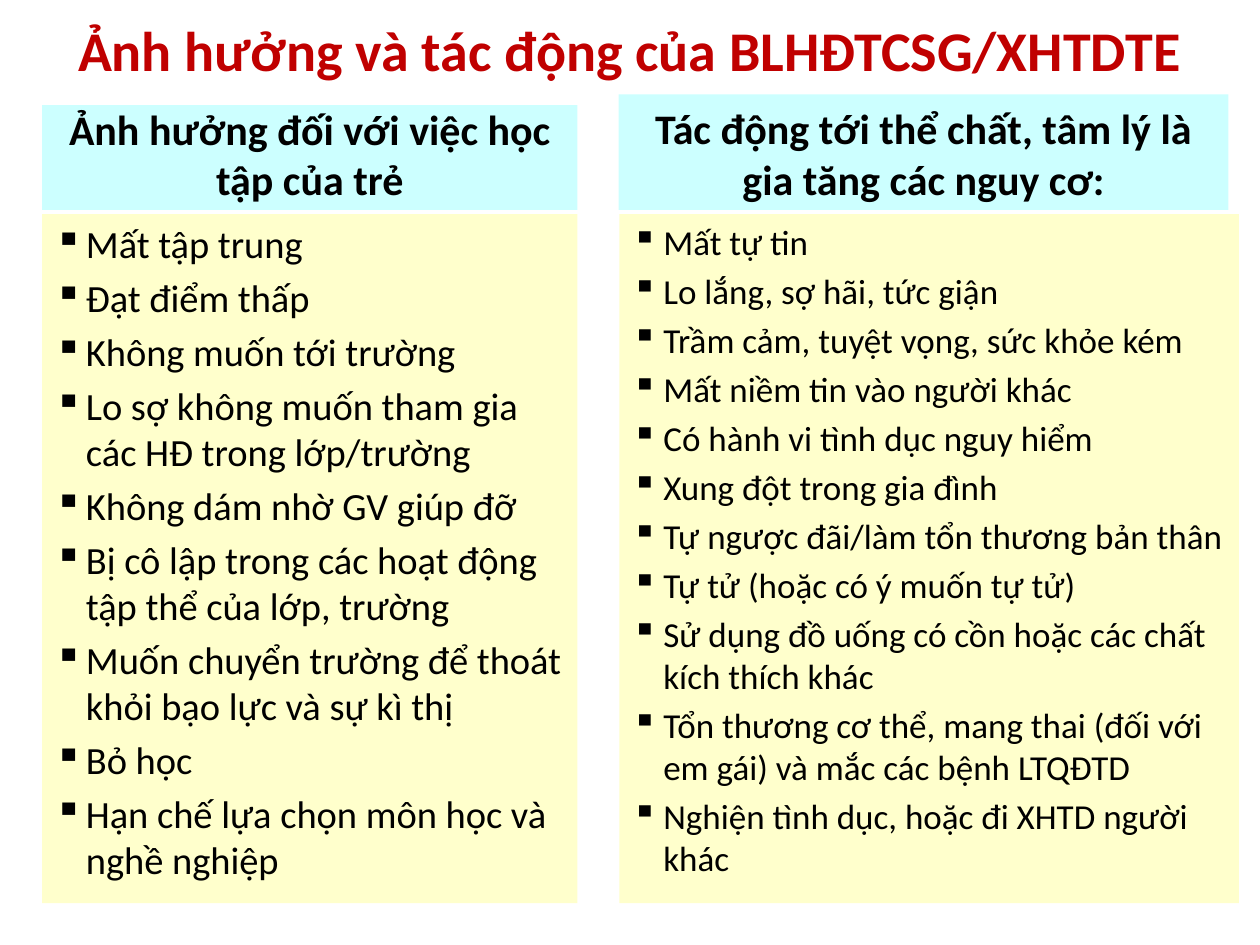
from pptx import Presentation
from pptx.dml.color import RGBColor
from pptx.enum.shapes import MSO_SHAPE
from pptx.enum.text import MSO_ANCHOR, PP_ALIGN
from pptx.oxml.ns import qn
from pptx.util import Pt
from lxml import etree

RECT = MSO_SHAPE.RECTANGLE
TOP, MID, LOW = MSO_ANCHOR.TOP, MSO_ANCHOR.MIDDLE, MSO_ANCHOR.BOTTOM
LEFT, MIDDLE = PP_ALIGN.LEFT, PP_ALIGN.CENTER

FONT = "Calibri"
RED, BLACK, CYAN, CREAM = "C00000", "000000", "CCFFFF", "FFFFCC"
INDENT = 18
LIST_TOP, LIST_HIGH = 122.4, 393.8
HEAD_END = 120

TITLE = "Ảnh hưởng và tác động của BLHĐTCSG/XHTDTE"
STUDY = [
    "Mất tập trung",
    "Đạt điểm thấp",
    "Không muốn tới trường",
    "Lo sợ không muốn tham gia các HĐ trong lớp/trường",
    "Không dám nhờ GV giúp đỡ",
    "Bị cô lập trong các hoạt động tập thể của lớp, trường",
    "Muốn chuyển trường để thoát khỏi bạo lực và sự kì thị",
    "Bỏ học",
    "Hạn chế lựa chọn môn học và nghề nghiệp",
]
HEALTH = [
    "Mất tự tin",
    "Lo lắng, sợ hãi, tức giận",
    "Trầm cảm, tuyệt vọng, sức khỏe kém",
    "Mất niềm tin vào người khác",
    "Có hành vi tình dục nguy hiểm",
    "Xung đột trong gia đình",
    "Tự ngược đãi/làm tổn thương bản thân",
    "Tự tử (hoặc có ý muốn tự tử)",
    "Sử dụng đồ uống có cồn hoặc các chất kích thích khác",
    "Tổn thương cơ thể, mang thai (đối với em gái) và mắc các bệnh LTQĐTD",
    "Nghiện tình dục, hoặc đi XHTD người khác",
]
# Heading, items, heading box (left, top, width), list box (left, width), size
COLUMNS = [
    ("Ảnh hưởng đối với việc học tập của trẻ", STUDY,
     (24, 60, 306), (24, 306), 22),
    ("Tác động tới thể chất, tâm lý là gia tăng các nguy cơ:", HEALTH,
     (353.5, 54, 348.5), (354, 354), 20),
]


def color(code):
    return RGBColor.from_string(code)


def bullet(para):
    props = para._p.get_or_add_pPr()
    props.set("marL", str(Pt(INDENT)))
    props.set("indent", str(-Pt(INDENT)))
    etree.SubElement(props, qn("a:buChar")).set("char", "▪")


def write(frame, lines, size=24, ink=BLACK, bold=False, align=LEFT,
          anchor=TOP, gap=0.2, marked=False):
    frame.word_wrap = True
    frame.vertical_anchor = anchor
    for i, line in enumerate(lines):
        para = frame.paragraphs[0] if i == 0 else frame.add_paragraph()
        para.alignment = align
        para.space_before = Pt(size * gap)
        if marked:
            bullet(para)
        run = para.add_run()
        run.text = line
        font = run.font
        font.name, font.size, font.bold = FONT, Pt(size), bold
        font.color.rgb = color(ink)


def panel(slide, left, top, width, height, fill):
    shape = slide.shapes.add_shape(
        RECT, Pt(left), Pt(top), Pt(width), Pt(height))
    shape.shadow.inherit = False
    shape.fill.solid()
    shape.fill.fore_color.rgb = color(fill)
    shape.line.fill.background()
    return shape.text_frame


def column(slide, head, items, head_box, list_box, size):
    left, top, width = head_box
    frame = panel(slide, left, top, width, HEAD_END - top, CYAN)
    write(frame, [head], bold=True, align=MIDDLE, anchor=LOW)
    left, width = list_box
    frame = panel(slide, left, LIST_TOP, width, LIST_HIGH, CREAM)
    write(frame, items, size=size, marked=True)


def main():
    deck = Presentation()
    deck.slide_width, deck.slide_height = Pt(720), Pt(540)
    slide = deck.slides.add_slide(deck.slide_layouts[6])

    # Title
    box = slide.shapes.add_textbox(Pt(36), Pt(6), Pt(648), Pt(44.6))
    write(box.text_frame, [TITLE], size=32, ink=RED, bold=True,
          align=MIDDLE, anchor=MID, gap=0)

    # Two headed lists
    for parts in COLUMNS:
        column(slide, *parts)

    deck.save("out.pptx")


if __name__ == "__main__":
    main()
